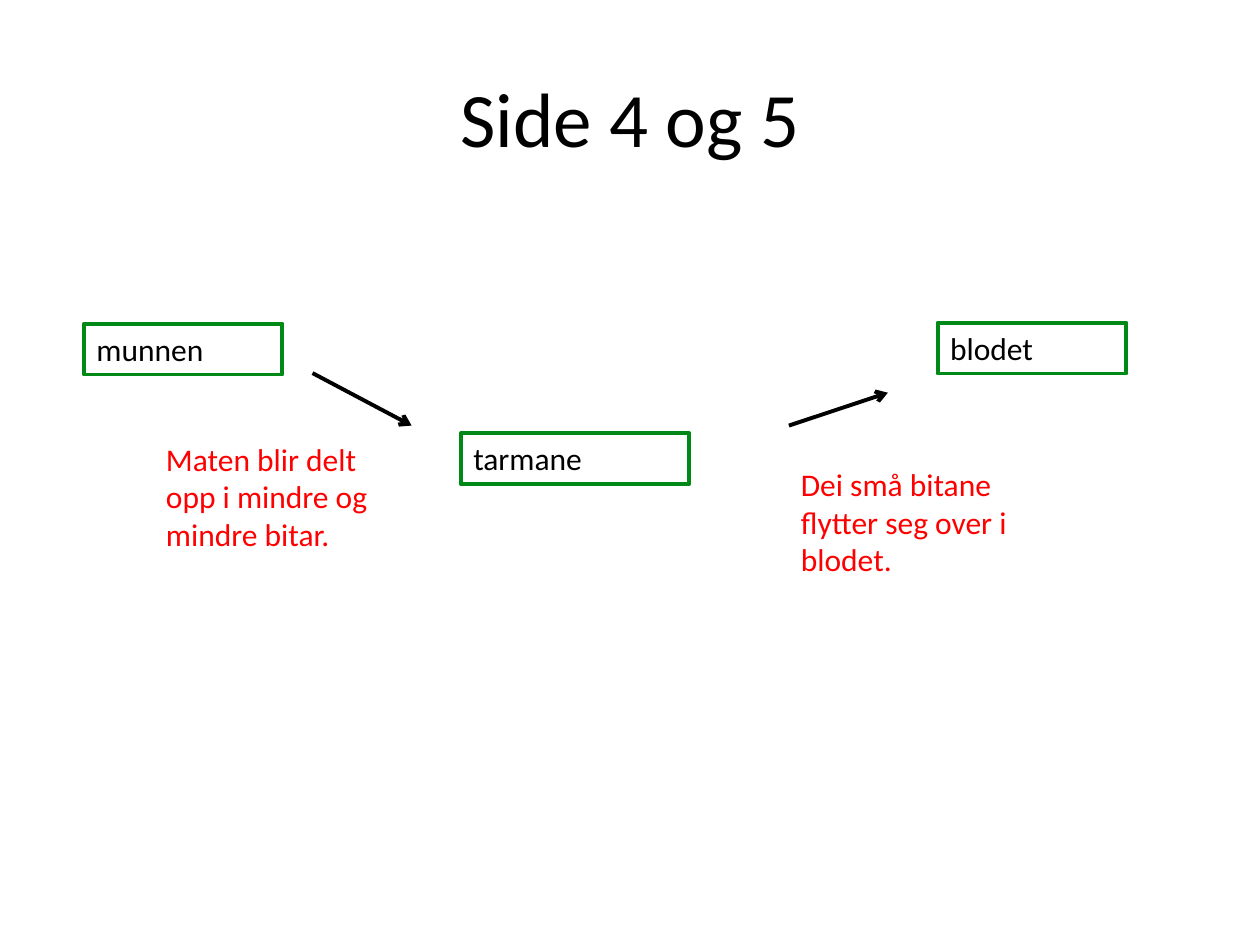
import lxml.etree
import pptx
import pptx.dml.color
import pptx.enum.shapes
import pptx.enum.text
import pptx.oxml.ns
import pptx.util

Pt = pptx.util.Pt


class SlideBuilder:
    font = "Calibri"
    body_size = 18
    line_width = 2.25
    colours = {"text": "000000", "organ": "018918", "note": "FF0000"}

    def __init__(self, slide):
        self.slide = slide

    def colour(self, name):
        return pptx.dml.color.RGBColor.from_string(self.colours[name])

    def set_text(self, shape, text, colour="text", size=body_size,
                 align=pptx.enum.text.PP_ALIGN.LEFT,
                 anchor=pptx.enum.text.MSO_ANCHOR.TOP):
        text_frame = shape.text_frame
        text_frame.text = text
        text_frame.word_wrap = True
        text_frame.vertical_anchor = anchor
        paragraph = text_frame.paragraphs[0]
        paragraph.alignment = align
        font = paragraph.runs[0].font
        font.name = self.font
        font.size = Pt(size)
        font.color.rgb = self.colour(colour)

    def text_box(self, left, top, width, height, text, **style):
        shape = self.slide.shapes.add_textbox(
            Pt(left), Pt(top), Pt(width), Pt(height))
        self.set_text(shape, text, **style)

    def title(self, text):
        self.text_box(36, 21.6, 648, 90, text, size=44,
                      align=pptx.enum.text.PP_ALIGN.CENTER,
                      anchor=pptx.enum.text.MSO_ANCHOR.MIDDLE)

    def organ(self, left, top, width, text):
        shape = self.slide.shapes.add_shape(
            pptx.enum.shapes.MSO_SHAPE.RECTANGLE,
            Pt(left), Pt(top), Pt(width), Pt(29.08))
        shape.shadow.inherit = False
        shape.fill.background()
        shape.line.color.rgb = self.colour("organ")
        shape.line.width = Pt(self.line_width)
        self.set_text(shape, text)

    def note(self, left, top, width, text):
        self.text_box(left, top, width, 72.7, text, colour="note")

    def arrow(self, start, end):
        connector = self.slide.shapes.add_connector(
            pptx.enum.shapes.MSO_CONNECTOR.STRAIGHT,
            *(Pt(value) for value in start + end))
        connector.line.color.rgb = self.colour("text")
        connector.line.width = Pt(self.line_width)
        qn = pptx.oxml.ns.qn
        properties = connector.element.spPr
        line = properties.find(qn("a:ln"))
        lxml.etree.SubElement(line, qn("a:tailEnd"), type="arrow")
        lxml.etree.SubElement(properties, qn("a:effectLst"))


def main():
    presentation = pptx.Presentation()
    presentation.slide_width = Pt(720)
    presentation.slide_height = Pt(540)
    builder = SlideBuilder(
        presentation.slides.add_slide(presentation.slide_layouts[6]))

    builder.title("Side 4 og 5")
    builder.organ(48, 185, 113.4, "munnen")
    builder.organ(263.4, 247.6, 130.4, "tarmane")
    builder.organ(535.8, 184.4, 107.8, "blodet")
    builder.arrow((178.6, 213.2), (235.2, 243.2))
    builder.arrow((450.8, 243.2), (507.4, 224.4))
    builder.note(87.8, 247.6, 147.4,
                 "Maten blir delt opp i mindre og mindre bitar.")
    builder.note(450.6, 262, 139,
                 "Dei små bitane flytter seg over i blodet.")

    presentation.save("out.pptx")


if __name__ == "__main__":
    main()
